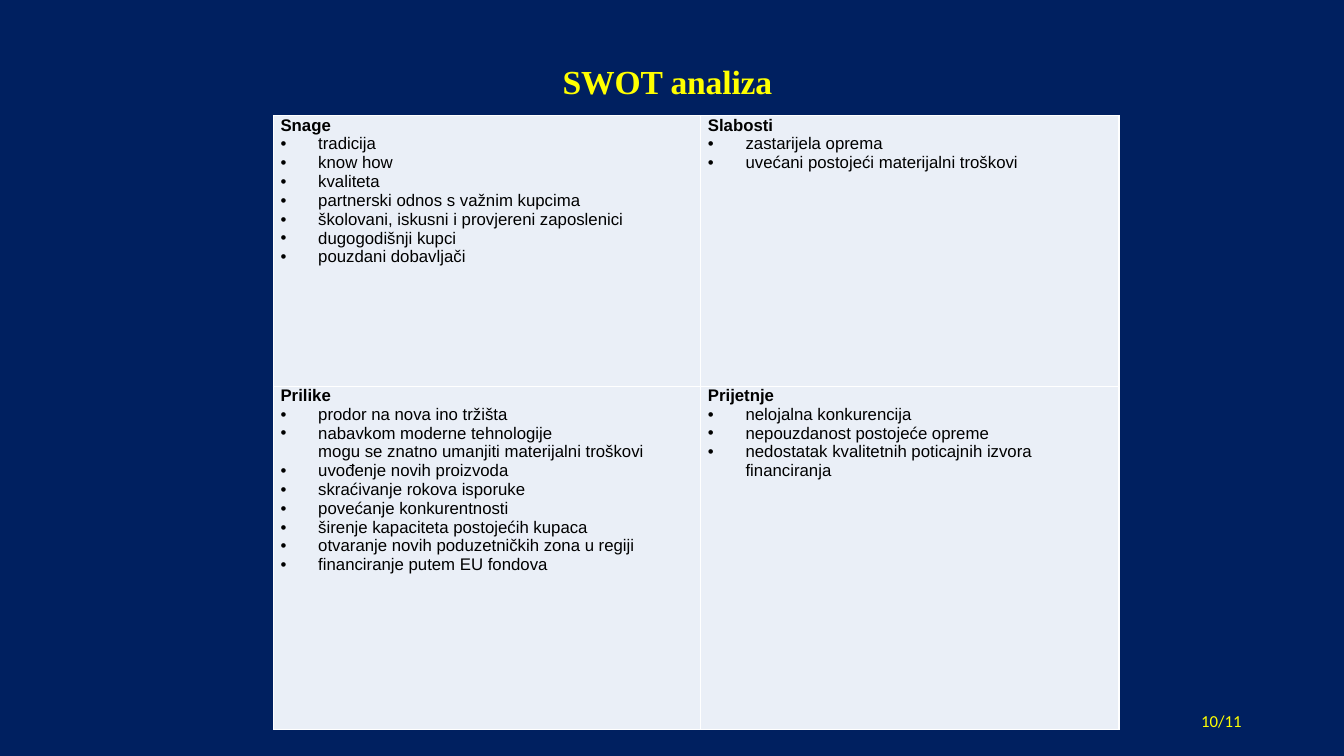
from lxml.etree import SubElement
from pptx import Presentation
from pptx.dml.color import RGBColor
from pptx.enum.text import MSO_ANCHOR, PP_ALIGN
from pptx.oxml.ns import qn
from pptx.util import Cm, Pt

NAVY, YELLOW, PALE, WHITE, BLACK = "002060", "FFFF00", "EAEFF7", "FFFFFF", "000000"
INDENT = Cm(0.95)
COLUMN_WIDTHS = (10.77, 10.54)
ROW_HEIGHTS = (6.81, 8.66)
CONTINUATIONS = ("mogu se znatno umanjiti materijalni troškovi", "financiranja")
QUADRANTS = (
    (
        ("Snage", ("tradicija", "know how", "kvaliteta", "partnerski odnos s važnim kupcima",
                   "školovani, iskusni i provjereni zaposlenici", "dugogodišnji kupci",
                   "pouzdani dobavljači")),
        ("Slabosti", ("zastarijela oprema", "uvećani postojeći materijalni troškovi")),
    ),
    (
        ("Prilike", ("prodor na nova ino tržišta", "nabavkom moderne tehnologije",
                     CONTINUATIONS[0], "uvođenje novih proizvoda",
                     "skraćivanje rokova isporuke", "povećanje konkurentnosti",
                     "širenje kapaciteta postojećih kupaca",
                     "otvaranje novih poduzetničkih zona u regiji",
                     "financiranje putem EU fondova")),
        ("Prijetnje", ("nelojalna konkurencija", "nepouzdanost postojeće opreme",
                       "nedostatak kvalitetnih poticajnih izvora", CONTINUATIONS[1])),
    ),
)


def color(value):
    """Turn a hex string into a colour."""
    return RGBColor.from_string(value)


def add_run(paragraph, text, size, font_name, font_color, bold=False):
    """Add one formatted run to a paragraph."""
    run = paragraph.add_run()
    run.text = text
    run.font.size = Pt(size)
    run.font.name = font_name
    run.font.bold = bold
    run.font.color.rgb = color(font_color)
    return run


def add_text_box(slide, left, top, width, height, alignment):
    """Add a wrapping text box and return its shape."""
    shape = slide.shapes.add_textbox(Cm(left), Cm(top), Cm(width), Cm(height))
    shape.text_frame.word_wrap = True
    shape.text_frame.paragraphs[0].alignment = alignment
    return shape


def add_title(slide, left, top, width, height):
    """Place the slide title in its box."""
    shape = add_text_box(slide, left, top, width, height, PP_ALIGN.CENTER)
    shape.text_frame.margin_right = Cm(0.81)
    run = add_run(shape.text_frame.paragraphs[0], "SWOT analiza", 24, "Times New Roman", YELLOW, True)
    run.font._element.set("spc", "-10")


def add_page_number(slide, left, top, width, height):
    """Place the page number in its box."""
    shape = add_text_box(slide, left, top, width, height, PP_ALIGN.RIGHT)
    shape.text_frame.vertical_anchor = MSO_ANCHOR.MIDDLE
    add_run(shape.text_frame.paragraphs[0], "10/11", 12, "Calibri", YELLOW)


def indent_item(paragraph, bulleted):
    """Indent a list line, hanging a bullet in front when asked."""
    paragraph.alignment = PP_ALIGN.JUSTIFY
    properties = paragraph._p.get_or_add_pPr()
    properties.set("marL", str(INDENT))
    properties.set("indent", str(-INDENT if bulleted else 0))
    if bulleted:
        SubElement(properties, qn("a:buFont"), typeface="Arial")
        SubElement(properties, qn("a:buChar"), char="•")
    else:
        SubElement(properties, qn("a:buNone"))


def style_cell(cell):
    """Set the margins, borders and fill of a cell."""
    cell.margin_left = cell.margin_right = Cm(0.18)
    cell.margin_top = cell.margin_bottom = 0
    properties = cell._tc.get_or_add_tcPr()
    for side in ("lnL", "lnR", "lnT", "lnB"):
        line = SubElement(properties, qn(f"a:{side}"), w=str(Pt(1)))
        fill = SubElement(line, qn("a:solidFill"))
        SubElement(fill, qn("a:srgbClr"), val=WHITE)
    cell.fill.solid()
    cell.fill.fore_color.rgb = color(PALE)


def fill_quadrant(cell, heading, items):
    """Write a heading and its list into a cell."""
    style_cell(cell)
    add_run(cell.text_frame.paragraphs[0], heading, 12, "Arial", BLACK, True)
    for item in items:
        paragraph = cell.text_frame.add_paragraph()
        indent_item(paragraph, item not in CONTINUATIONS)
        add_run(paragraph, item, 12, "Arial", BLACK)


def add_swot_table(slide, left, top):
    """Place the two-by-two SWOT table from its top left corner."""
    frame = slide.shapes.add_table(2, 2, Cm(left), Cm(top),
                                   Cm(sum(COLUMN_WIDTHS)), Cm(sum(ROW_HEIGHTS)))
    table = frame.table
    table.first_row = table.horz_banding = False
    for column, width in zip(table.columns, COLUMN_WIDTHS):
        column.width = Cm(width)
    for row, height, quadrants in zip(table.rows, ROW_HEIGHTS, QUADRANTS):
        row.height = Cm(height)
        for cell, (heading, items) in zip(row.cells, quadrants):
            fill_quadrant(cell, heading, items)


def main():
    """Build the slide and save it."""
    presentation = Presentation()
    presentation.slide_width, presentation.slide_height = Cm(33.87), Cm(19.05)
    slide = presentation.slides.add_slide(presentation.slide_layouts[6])
    slide.background.fill.solid()
    slide.background.fill.fore_color.rgb = color(NAVY)
    add_title(slide, 4.6, 1.4, 25, 1.28)
    add_swot_table(slide, 6.89, 2.92)
    add_page_number(slide, 23.92, 17.66, 7.62, 1.01)
    presentation.save("out.pptx")


if __name__ == "__main__":
    main()
